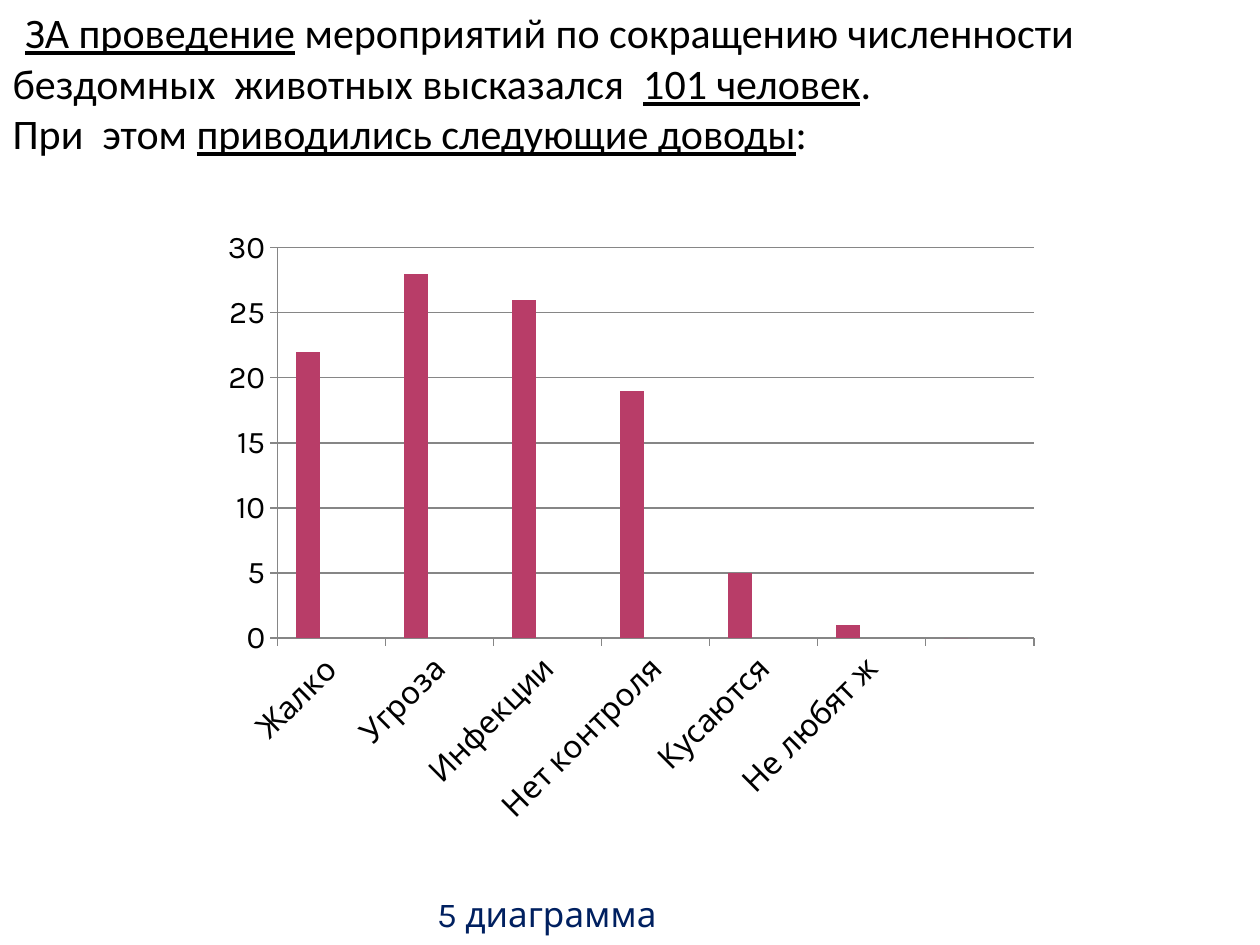
from dataclasses import dataclass

from lxml import etree
from pptx import Presentation
from pptx.chart.data import CategoryChartData
from pptx.dml.color import RGBColor
from pptx.enum.chart import XL_CHART_TYPE, XL_TICK_MARK
from pptx.enum.text import MSO_ANCHOR, MSO_AUTO_SIZE, PP_ALIGN
from pptx.oxml.ns import qn
from pptx.util import Inches, Pt

COLUMN = XL_CHART_TYPE.COLUMN_CLUSTERED
OUTSIDE = XL_TICK_MARK.OUTSIDE
MIDDLE, BOTTOM = MSO_ANCHOR.MIDDLE, MSO_ANCHOR.BOTTOM
LEFT, RIGHT = PP_ALIGN.LEFT, PP_ALIGN.RIGHT
FIT_SHAPE = MSO_AUTO_SIZE.SHAPE_TO_FIT_TEXT
NO_FIT = MSO_AUTO_SIZE.NONE


@dataclass(frozen=True)
class Theme:
    """Hold the colours, fonts and type sizes of the slide."""

    text: RGBColor = RGBColor(0, 0, 0)
    caption: RGBColor = RGBColor(0x00, 0x20, 0x60)
    grid: RGBColor = RGBColor(0x86, 0x86, 0x86)
    series: tuple = ("B83D68", "AC66BB", "DE6C36")
    title_font: str = "Calibri"
    chart_font: str = "Karla"
    title_size: int = 24
    caption_size: int = 20
    chart_size: int = 18


THEME = Theme()
TITLE_LINES = [
    [("ЗА проведение", True), (" мероприятий по сокращению численности", False)],
    [("бездомных  животных высказался  ", False), ("101 человек", True), (".", False)],
    [("При  этом ", False), ("приводились следующие доводы", True), (":", False)],
]
ARGUMENTS = {
    "Жалко": 22,
    "Угроза": 28,
    "Инфекции": 26,
    "Нет контроля": 19,
    "Кусаются": 5,
    "Не любят ж": 1,
    "": 0,
}


def set_values(target, values):
    """Set the attributes of an object from a dict."""
    for name, value in values.items():
        setattr(target, name, value)


def format_font(font, name, size, colour):
    """Give a font its name, size and colour."""
    set_values(font, {"name": name, "size": Pt(size), "bold": False})
    font.color.rgb = colour


def place(shape, left, top, width, height):
    """Move a shape to a position given in inches."""
    set_values(shape, {"left": Inches(left), "top": Inches(top),
                       "width": Inches(width), "height": Inches(height)})


def add_title(slide):
    """Fill the title placeholder with partly underlined lines."""
    title = slide.shapes.title
    place(title, 0, 0, 8.79, 1.31)
    frame = title.text_frame
    set_values(frame, {"word_wrap": False, "auto_size": FIT_SHAPE,
                       "vertical_anchor": MIDDLE})
    for index, line in enumerate(TITLE_LINES):
        paragraph = frame.add_paragraph() if index else frame.paragraphs[0]
        paragraph.alignment = LEFT
        for text, underlined in line:
            run = paragraph.add_run()
            run.text = text
            format_font(run.font, THEME.title_font, THEME.title_size, THEME.text)
            run.font.underline = underlined
    first_line = frame.paragraphs[0]._p.get_or_add_pPr()
    first_line.set("indent", str(Inches(0.1)))


def add_caption(slide, text):
    """Add the right-aligned chart caption."""
    box = slide.shapes.add_textbox(0, Inches(7.03), Inches(5.31), Inches(0.39))
    frame = box.text_frame
    set_values(frame, {"word_wrap": True, "auto_size": NO_FIT, "vertical_anchor": BOTTOM,
                       "margin_top": 0, "margin_bottom": 0})
    paragraph = frame.paragraphs[0]
    paragraph.alignment = RIGHT
    run = paragraph.add_run()
    run.text = text
    format_font(run.font, THEME.chart_font, THEME.caption_size, THEME.caption)


def set_plot_layout(chart, **shares):
    """Fix the inner plot area as shares of the chart."""
    plot_area = chart._chartSpace.chart.plotArea
    for layout in plot_area.findall(qn("c:layout")):
        plot_area.remove(layout)
    layout = etree.Element(qn("c:layout"))
    manual = etree.SubElement(layout, qn("c:manualLayout"))
    values = {"layoutTarget": "inner", "xMode": "edge", "yMode": "edge", **shares}
    for name, value in values.items():
        etree.SubElement(manual, qn(f"c:{name}")).set("val", str(value))
    plot_area.insert(0, layout)


def format_axis(axis):
    """Give an axis its line, ticks and label font."""
    axis.major_tick_mark = OUTSIDE
    axis.format.line.color.rgb = THEME.grid
    format_font(axis.tick_labels.font, THEME.chart_font, THEME.chart_size, THEME.text)


def add_arguments_chart(slide):
    """Add the column chart of arguments."""
    data = CategoryChartData()
    data.categories = list(ARGUMENTS)
    blanks = [None] * len(ARGUMENTS)
    for number, values in enumerate([list(ARGUMENTS.values()), blanks, blanks], 1):
        data.add_series(f"Series {number}", values)
    chart = slide.shapes.add_chart(COLUMN, Inches(1.67), Inches(1.72),
                                   Inches(6.67), Inches(4.92), data).chart
    set_values(chart, {"has_legend": False, "has_title": False})
    format_font(chart.font, THEME.chart_font, THEME.chart_size, THEME.text)
    plot = chart.plots[0]
    set_values(plot, {"vary_by_categories": False, "gap_width": 150, "overlap": 0})
    for series, colour in zip(plot.series, THEME.series):
        series.format.fill.solid()
        series.format.fill.fore_color.rgb = RGBColor.from_string(colour)
    for axis in (chart.category_axis, chart.value_axis):
        format_axis(axis)
    set_values(chart.value_axis, {"minimum_scale": 0, "maximum_scale": 30,
                                  "major_unit": 5, "has_major_gridlines": True})
    chart.value_axis.major_gridlines.format.line.color.rgb = THEME.grid
    label_body = chart._chartSpace.xpath(".//c:catAx/c:txPr/a:bodyPr")[0]
    label_body.set("rot", str(-45 * 60000))
    set_plot_layout(chart, x=0.08, y=0.05, w=0.9, h=0.63)


def main():
    """Build and save the slide."""
    presentation = Presentation()
    set_values(presentation, {"slide_width": Inches(10), "slide_height": Inches(7.5)})
    slide = presentation.slides.add_slide(presentation.slide_layouts[5])
    add_arguments_chart(slide)
    add_title(slide)
    add_caption(slide, "5 диаграмма")
    presentation.save("out.pptx")


if __name__ == "__main__":
    main()
